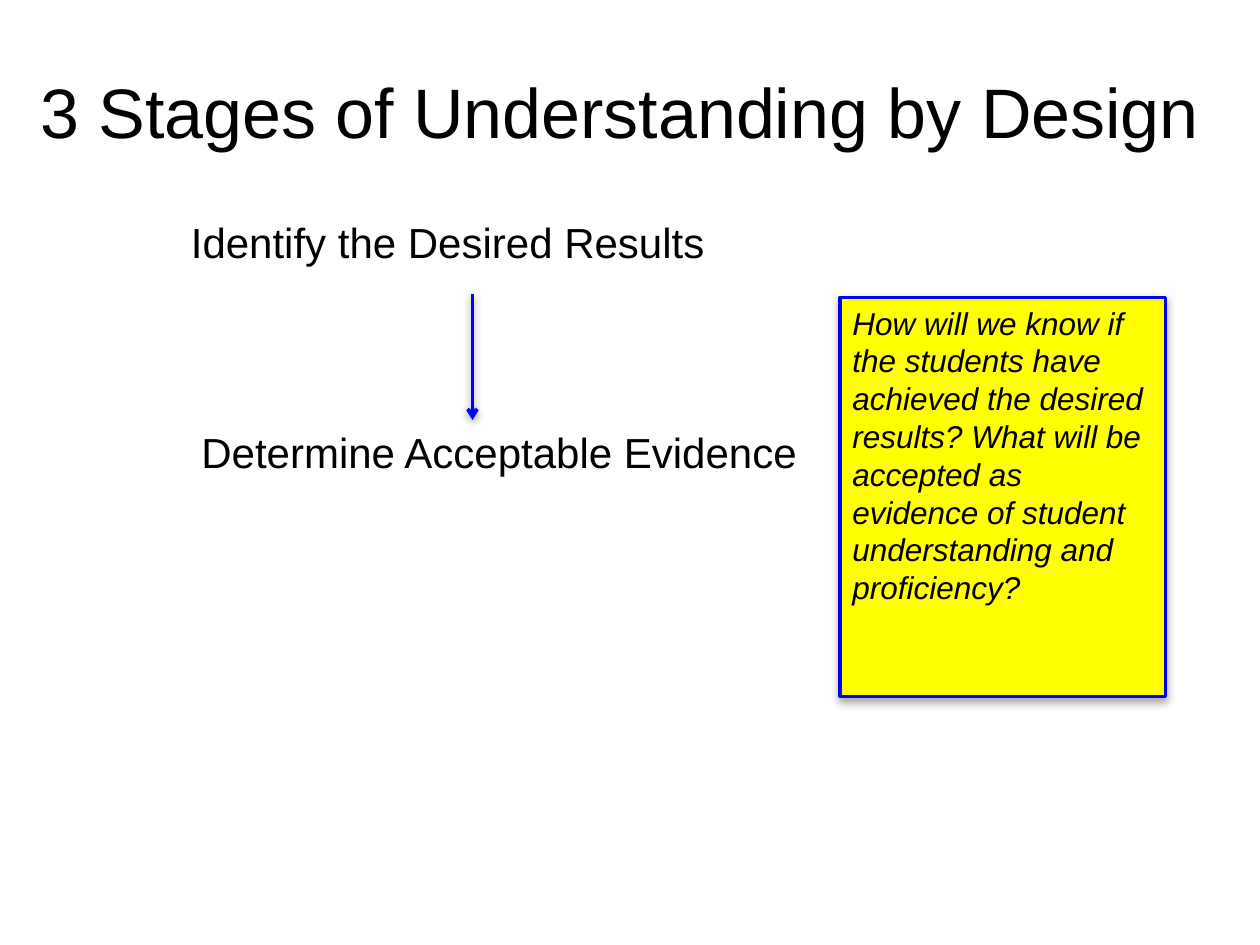
from dataclasses import dataclass

from lxml import etree
from pptx import Presentation, util as u
from pptx.dml.color import RGBColor
from pptx.enum import shapes, text
from pptx.oxml.ns import qn

COLS, ROWS = 120, 90
BLUE, YELLOW, BLACK = "0000FF", "FFFF00", "000000"

deck = Presentation()
deck.slide_width, deck.slide_height = u.Inches(10), u.Inches(7.5)
slide = deck.slides.add_slide(deck.slide_layouts[6])


@dataclass
class Label:
    """Text placed in grid columns and rows."""
    words: str
    col: float
    row: float
    wide: float
    high: float
    size: int = 24
    italic: bool = False
    title: bool = False


def grid(col: float, row: float) -> tuple[int, int]:
    return round(deck.slide_width * col / COLS), round(deck.slide_height * row / ROWS)


def color(code: str) -> RGBColor:
    return RGBColor.from_string(code)


def add_label(item: Label) -> None:
    box = slide.shapes.add_textbox(*grid(item.col, item.row), *grid(item.wide, item.high))
    frame = box.text_frame
    frame.text = item.words
    frame.word_wrap = True
    para = frame.paragraphs[0]
    if item.title:
        frame.vertical_anchor = text.MSO_ANCHOR.MIDDLE
        para.alignment = text.PP_ALIGN.CENTER
    else:
        frame.auto_size = text.MSO_AUTO_SIZE.SHAPE_TO_FIT_TEXT
    font = para.runs[0].font
    font.name, font.size, font.italic = "Arial", u.Pt(item.size), item.italic
    font.color.rgb = color(BLACK)


def add_edge(shape) -> None:
    shape.line.color.rgb = color(BLUE)
    shape.line.width = u.Pt(2)


def add_shade(shape, dist: float, alpha: int) -> None:
    """Give the shape a soft shadow straight below it."""
    props = shape._element.spPr
    effects = etree.SubElement(props, qn("a:effectLst"))
    shade = etree.SubElement(effects, qn("a:outerShdw"), blurRad=str(u.Pt(5)),
                             dist=str(u.Pt(dist)), dir="5400000", rotWithShape="0")
    tint = etree.SubElement(shade, qn("a:srgbClr"), val=BLACK)
    etree.SubElement(tint, qn("a:alpha"), val=str(alpha * 1000))


# Title and stages
for item in (
    Label("3 Stages of Understanding by Design", 2, 3, 114, 15, size=40, title=True),
    Label("Identify the Desired Results", 17, 20, 69, 6),
    Label("Determine Acceptable Evidence", 18, 40, 72, 6),
):
    add_label(item)

# Arrow between the stages
arrow = slide.shapes.add_connector(shapes.MSO_CONNECTOR.STRAIGHT, *grid(45, 28), *grid(45, 40))
add_edge(arrow)
etree.SubElement(arrow.line._get_or_add_ln(), qn("a:tailEnd"), type="arrow")
add_shade(arrow, 1.6, 38)

# Question card
card = slide.shapes.add_shape(shapes.MSO_SHAPE.RECTANGLE, *grid(80, 28.33), *grid(31, 38))
card.fill.solid()
card.fill.fore_color.rgb = color(YELLOW)
add_edge(card)
add_shade(card, 1.8, 35)
add_label(Label(
    "How will we know if the students have achieved the desired results? "
    "What will be accepted as evidence of student understanding and proficiency?",
    80, 28.33, 31, 30.25, size=18, italic=True))

deck.save("out.pptx")
